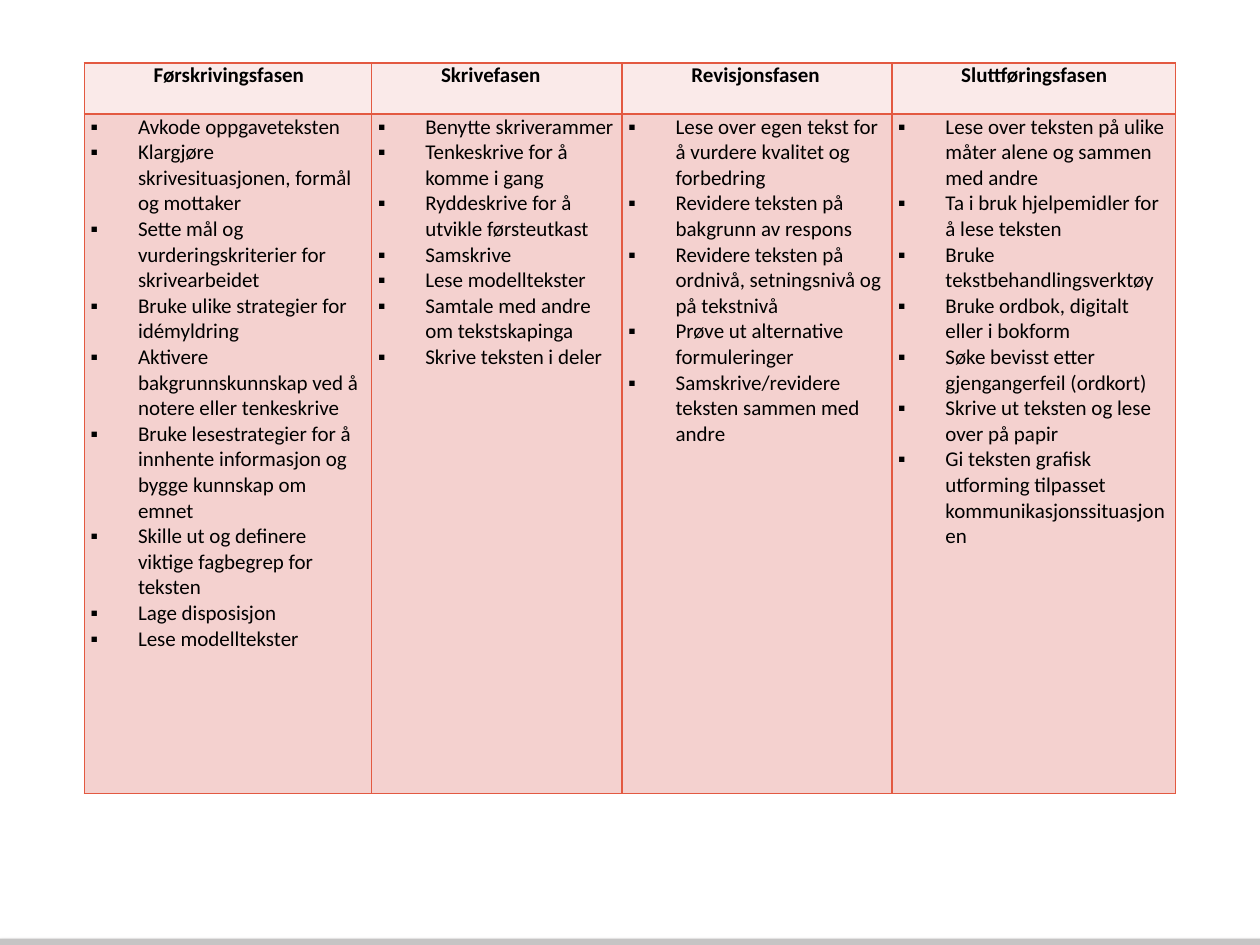
from lxml import etree
from pptx import Presentation
from pptx.dml.color import RGBColor
from pptx.enum import shapes
from pptx.oxml import ns
from pptx.util import Pt

BLACK = RGBColor(0x00, 0x00, 0x00)
BORDER = RGBColor(0xE3, 0x59, 0x41)
HEADER_FILL = RGBColor(0xFA, 0xEA, 0xE9)
BODY_FILL = RGBColor(0xF4, 0xD1, 0xCF)
BAR_GREY = RGBColor(0xC5, 0xC4, 0xC4)

SLIDE_WIDTH, SLIDE_HEIGHT = 720, 540
COLUMN_WIDTHS = [164.16, 143.1, 154.2, 162]
ROW_HEIGHTS = [29.28, 388.08]
HEADER_INDENT = 36
BULLET_INDENT = 27
CELL_MARGINS = {"margin_left": Pt(3.6), "margin_right": Pt(3.6),
                "margin_top": 0, "margin_bottom": 0}
FONT = {"name": "Calibri", "size": Pt(12)}

PHASES = {
    "Førskrivingsfasen": [
        "Avkode oppgaveteksten",
        "Klargjøre skrivesituasjonen, formål og mottaker",
        "Sette mål og vurderingskriterier for skrivearbeidet",
        "Bruke ulike strategier for idémyldring",
        "Aktivere bakgrunnskunnskap ved å notere eller tenkeskrive",
        "Bruke lesestrategier for å innhente informasjon og bygge kunnskap om emnet",
        "Skille ut og definere viktige fagbegrep for teksten",
        "Lage disposisjon",
        "Lese modelltekster",
    ],
    "Skrivefasen": [
        "Benytte skriverammer",
        "Tenkeskrive for å komme i gang",
        "Ryddeskrive for å utvikle førsteutkast",
        "Samskrive",
        "Lese modelltekster",
        "Samtale med andre om tekstskapinga",
        "Skrive teksten i deler",
    ],
    "Revisjonsfasen": [
        "Lese over egen tekst for å vurdere kvalitet og forbedring",
        "Revidere teksten på bakgrunn av respons",
        "Revidere teksten på ordnivå, setningsnivå og på tekstnivå",
        "Prøve ut alternative formuleringer",
        "Samskrive/revidere teksten sammen med andre",
    ],
    "Sluttføringsfasen": [
        "Lese over teksten på ulike måter alene og sammen med andre",
        "Ta i bruk hjelpemidler for å lese teksten",
        "Bruke tekstbehandlingsverktøy",
        "Bruke ordbok, digitalt eller i bokform",
        "Søke bevisst etter gjengangerfeil (ordkort)",
        "Skrive ut teksten og lese over på papir",
        "Gi teksten grafisk utforming tilpasset kommunikasjonssituasjonen",
    ],
}


def set_values(target, values):
    for name, value in values.items():
        setattr(target, name, value)


def add_element(parent, tag, **attributes):
    element = etree.SubElement(parent, ns.qn(tag))
    for name, value in attributes.items():
        element.set(name, str(value))
    return element


def format_cell(cell, fill):
    set_values(cell, CELL_MARGINS)
    properties = cell._tc.get_or_add_tcPr()
    for side in ("a:lnL", "a:lnR", "a:lnT", "a:lnB"):
        line = add_element(properties, side, w=Pt(1))
        add_element(add_element(line, "a:solidFill"), "a:srgbClr", val=BORDER)
    cell.fill.solid()
    cell.fill.fore_color.rgb = fill


def write_paragraph(para, wording, bold=False, left=0, bullet=None):
    properties = para._p.get_or_add_pPr()
    properties.set("marL", str(Pt(left)))
    properties.set("indent", str(Pt(-left) if bullet else 0))
    if bullet:
        add_element(properties, "a:buFont", typeface="Calibri")
        add_element(properties, "a:buChar", char=bullet)
    span = para.add_run()
    span.text = wording
    set_values(span.font, {**FONT, "bold": bold})
    span.font.color.rgb = BLACK


def add_phase_table(page, left, top):
    frame = page.shapes.add_table(
        len(ROW_HEIGHTS), len(PHASES), Pt(left), Pt(top),
        Pt(sum(COLUMN_WIDTHS)), Pt(sum(ROW_HEIGHTS)))
    table = frame.table
    set_values(table, {"first_row": False, "horz_banding": False})
    for row, height in zip(table.rows, ROW_HEIGHTS):
        row.height = Pt(height)
    for index, (phase, tasks) in enumerate(PHASES.items()):
        table.columns[index].width = Pt(COLUMN_WIDTHS[index])
        header, body = table.cell(0, index), table.cell(1, index)
        format_cell(header, HEADER_FILL)
        format_cell(body, BODY_FILL)
        write_paragraph(header.text_frame.paragraphs[0], phase,
                        bold=True, left=HEADER_INDENT)
        for number, task in enumerate(tasks):
            frame_text = body.text_frame
            para = frame_text.add_paragraph() if number else frame_text.paragraphs[0]
            write_paragraph(para, task, left=BULLET_INDENT, bullet="▪")


def add_bottom_bar(page, left, top, width, height):
    bar = page.shapes.add_shape(shapes.MSO_SHAPE.RECTANGLE,
                                Pt(left), Pt(top), Pt(width), Pt(height))
    bar.fill.solid()
    bar.fill.fore_color.rgb = BAR_GREY
    bar.line.fill.background()
    effects = add_element(bar._element.spPr, "a:effectLst")
    shadow = add_element(effects, "a:outerShdw", blurRad=Pt(3.1), dist=Pt(1.6),
                         dir=90 * 60000, rotWithShape=0)
    add_element(add_element(shadow, "a:srgbClr", val=BLACK), "a:alpha", val=38000)


def main():
    deck = Presentation()
    set_values(deck, {"slide_width": Pt(SLIDE_WIDTH), "slide_height": Pt(SLIDE_HEIGHT)})
    page = deck.slides.add_slide(deck.slide_layouts[6])
    add_bottom_bar(page, 0, 536.4, SLIDE_WIDTH, 3.6)
    add_phase_table(page, 48.24, 36)
    deck.save("out.pptx")


if __name__ == "__main__":
    main()
